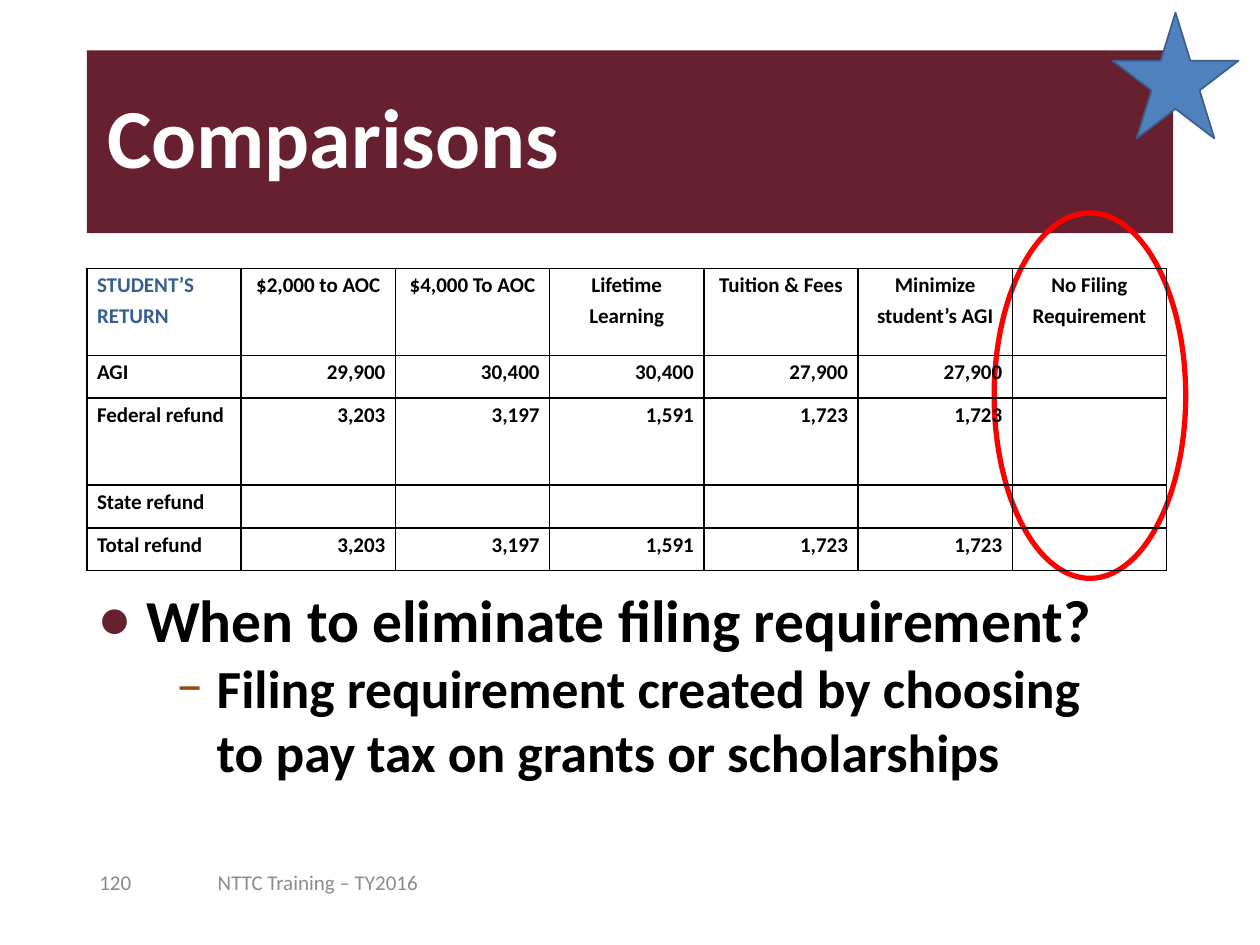
from dataclasses import dataclass

from lxml import etree
from pptx import Presentation
from pptx import util as u
from pptx.dml.color import RGBColor
from pptx.enum import shapes, text
from pptx.oxml import ns

LEFT = text.PP_ALIGN.LEFT
CENTER = text.PP_ALIGN.CENTER
RIGHT = text.PP_ALIGN.RIGHT
MIDDLE = text.MSO_ANCHOR.MIDDLE


@dataclass(frozen=True)
class Theme:
    font: str = "Calibri"
    wine: str = "67202F"
    rust: str = "984807"
    white: str = "FFFFFF"
    black: str = "000000"
    red: str = "FF0000"
    blue: str = "4F81BD"
    edge: str = "3A5F8C"
    head: str = "365F91"
    note: str = "8C8C8C"
    page: str = "898989"
    title: float = 48
    main: float = 34
    sub: float = 30.6
    small: float = 12


def add(node, tag, **attrs):
    return etree.SubElement(node, ns.qn(tag), attrs)


def place(shape, box):
    shape.left, shape.top, shape.width, shape.height = map(u.Inches, box)


class Page:
    def __init__(self, deck, theme):
        self.theme = theme
        self.slide = deck.slides.add_slide(deck.slide_layouts[1])

    def run(self, para, words, size, color, bold=True):
        run = para.add_run()
        run.text = words
        font = run.font
        font.name, font.size, font.bold = self.theme.font, u.Pt(size), bold
        font.color.rgb = RGBColor.from_string(color)

    def title(self, words, box):
        shape = self.slide.shapes.title
        place(shape, box)
        shape.fill.solid()
        shape.fill.fore_color.rgb = RGBColor.from_string(self.theme.wine)
        frame = shape.text_frame
        frame.auto_size = text.MSO_AUTO_SIZE.NONE
        frame.vertical_anchor = MIDDLE
        para = frame.paragraphs[0]
        para.alignment, para.line_spacing = LEFT, 0.9
        props = para._p.get_or_add_pPr()
        props.set("marL", str(u.Inches(0.06)))
        props.set("indent", "0")
        self.run(para, words, self.theme.title, self.theme.white)

    def bullet(self, para, mark, color, scale, left, hang):
        props = para._p.get_or_add_pPr()
        props.set("marL", str(u.Inches(left)))
        props.set("indent", str(-u.Inches(hang)))
        add(add(props, "a:buClr"), "a:srgbClr", val=color)
        add(props, "a:buSzPct", val=str(scale * 1000))
        add(props, "a:buFont", typeface=self.theme.font)
        add(props, "a:buChar", char=mark)

    def body(self, items, box):
        t = self.theme
        styles = [("●", t.wine, 90, 0.38, 0.38, t.main),
                  ("−", t.rust, 100, 0.94, 0.32, t.sub)]
        shape = self.slide.placeholders[1]
        place(shape, box)
        frame = shape.text_frame
        frame.auto_size = text.MSO_AUTO_SIZE.NONE
        for i, (level, words) in enumerate(items):
            para = frame.add_paragraph() if i else frame.paragraphs[0]
            *look, size = styles[level]
            para.level = level
            self.bullet(para, *look)
            para.space_before = u.Pt(0)
            self.run(para, words, size, t.black)

    def label(self, words, color, box):
        frame = self.slide.shapes.add_textbox(*map(u.Inches, box)).text_frame
        frame.word_wrap, frame.vertical_anchor = True, MIDDLE
        self.run(frame.paragraphs[0], words, self.theme.small, color, False)

    def shape(self, kind, box, line, width, fill=None):
        shape = self.slide.shapes.add_shape(kind, *map(u.Inches, box))
        shape.shadow.inherit = False
        if fill:
            shape.fill.solid()
            shape.fill.fore_color.rgb = RGBColor.from_string(fill)
        else:
            shape.fill.background()
        shape.line.color.rgb = RGBColor.from_string(line)
        shape.line.width = u.Pt(width)

    def border(self, cell):
        props = cell._tc.get_or_add_tcPr()
        for side in ("a:lnL", "a:lnR", "a:lnT", "a:lnB"):
            line = add(props, side, w=str(u.Pt(1)))
            add(add(line, "a:solidFill"), "a:srgbClr", val=self.theme.black)

    def cell(self, cell, words, align, color):
        cell.margin_left = cell.margin_right = u.Inches(0.08)
        cell.margin_top = cell.margin_bottom = 0
        self.border(cell)
        cell.fill.background()
        para = cell.text_frame.paragraphs[0]
        para.alignment, para.line_spacing = align, 1.18
        para.space_after = u.Pt(6)
        if words:
            self.run(para, words, self.theme.small, color)
        else:
            para.font.size = u.Pt(self.theme.small)

    def table(self, rows, highs, box):
        t = self.theme
        grid = self.slide.shapes.add_table(
            len(rows), len(rows[0]), *map(u.Inches, box)).table
        grid.first_row = grid.horz_banding = False
        for r, row in enumerate(rows):
            grid.rows[r].height = u.Inches(highs[r])
            for c, words in enumerate(row):
                align = LEFT if c == 0 else RIGHT if r else CENTER
                color = t.black if r or c else t.head
                self.cell(grid.cell(r, c), words, align, color)


def main():
    deck = Presentation()
    deck.slide_width, deck.slide_height = u.Inches(10), u.Inches(7.5)
    t = Theme()
    page = Page(deck, t)
    page.title("Comparisons", (0.69, 0.4, 8.62, 1.45))
    page.label("NTTC Training – TY2016", t.note, (1.63, 6.8, 3.77, 0.4))
    page.body([
        (0, "When to eliminate filing requirement?"),
        (1, "Filing requirement created by choosing to pay tax on grants "
            "or scholarships"),
    ], (0.68, 4.58, 8.43, 2.35))
    kinds = shapes.MSO_SHAPE
    page.shape(kinds.OVAL, (7.89, 1.69, 1.52, 2.9), t.red, 3)
    page.shape(kinds.STAR_5_POINT, (8.83, 0.1, 1, 1), t.edge, 1, t.blue)
    page.label("120", t.page, (0.69, 6.8, 0.69, 0.4))
    refund = ["3,203", "3,197", "1,591", "1,723", "1,723", ""]
    page.table([
        ["STUDENT’S RETURN", "$2,000 to AOC", "$4,000 To AOC",
         "Lifetime Learning", "Tuition & Fees", "Minimize student’s AGI",
         "No Filing Requirement"],
        ["AGI", "29,900", "30,400", "30,400", "27,900", "27,900", ""],
        ["Federal refund", *refund],
        ["State refund"] + [""] * 6,
        ["Total refund", *refund],
    ], [0.69, 0.34, 0.69, 0.34, 0.34], (0.69, 2.13, 8.57, 2.4))
    deck.save("out.pptx")


if __name__ == "__main__":
    main()
